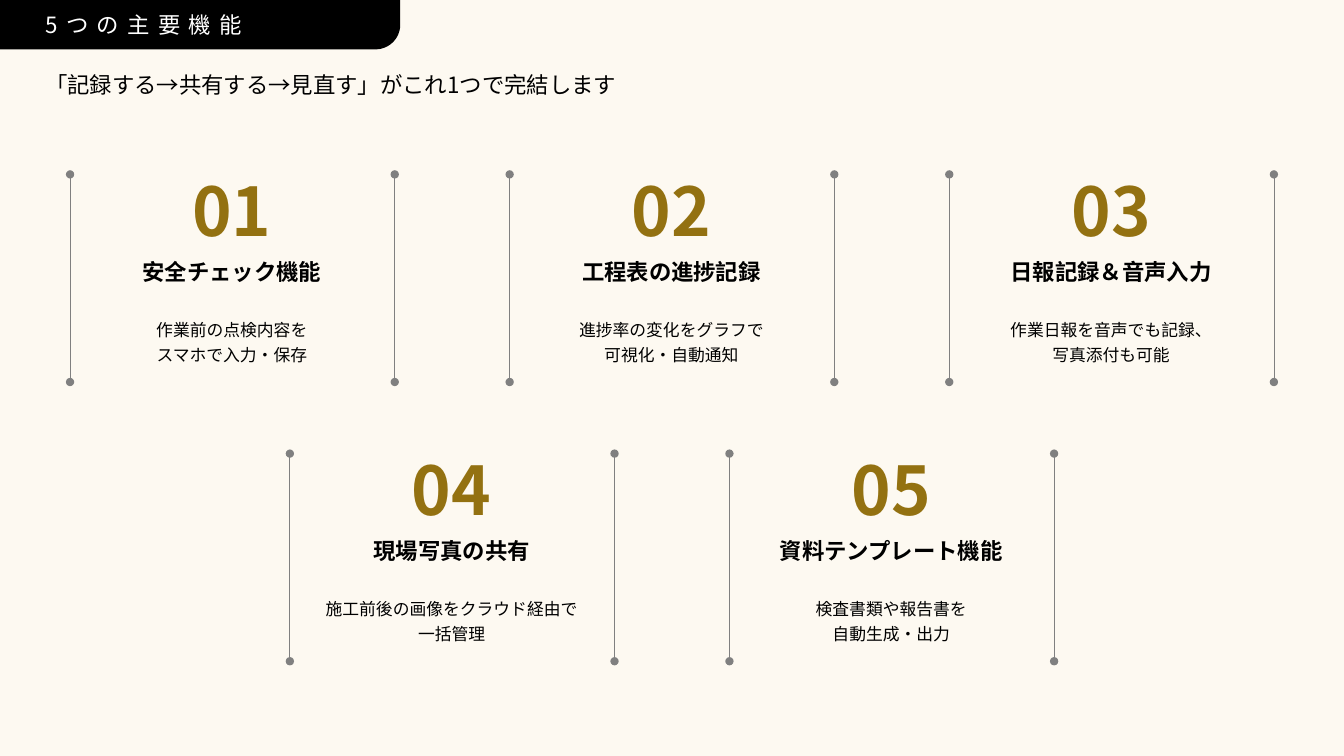
from lxml import etree
from pptx import Presentation
from pptx import util as u
from pptx.dml.color import RGBColor
from pptx.enum import shapes, text
from pptx.oxml.ns import qn

# Content
HEADING = "5つの主要機能"
LEAD = "「記録する→共有する→見直す」がこれ1つで完結します"
FEATURE_ROWS = [
    [
        ("01", "安全チェック機能", ["作業前の点検内容を", "スマホで入力・保存"]),
        ("02", "工程表の進捗記録", ["進捗率の変化をグラフで", "可視化・自動通知"]),
        ("03", "日報記録＆音声入力", ["作業日報を音声でも記録、", "写真添付も可能"]),
    ],
    [
        ("04", "現場写真の共有", ["施工前後の画像をクラウド経由で", "一括管理"]),
        ("05", "資料テンプレート機能", ["検査書類や報告書を", "自動生成・出力"]),
    ],
]

# Style and layout
COLORS = {"paper": "FDF9F1", "black": "000000", "white": "FFFFFF",
          "gold": "937111", "rule": "808080"}
FONT = "Noto Sans CJK JP"
SLIDE_W, SLIDE_H = 13.33, 7.5
CARD_W, CARD_H, CARD_PITCH = 3.22, 2.06, 4.36
FIRST_ROW_TOP, ROW_PITCH = 1.73, 2.77
TEXT_INSET, TEXT_W = 0.14, 2.93
NUMBER_FORMAT = {"size": u.Pt(48), "bold": True}
TITLE_FORMAT = {"size": u.Pt(16), "bold": True}
LEAD_FORMAT = {"size": u.Pt(16)}
BODY_FORMAT = {"size": u.Pt(12)}


def rgb(name):
    return RGBColor.from_string(COLORS[name])


def add_block(parent, kind, box, color):
    shape = parent.add_shape(kind, *map(u.Inches, box))
    shape.shadow.inherit = False
    shape.fill.solid()
    shape.fill.fore_color.rgb = rgb(color)
    shape.line.fill.background()
    return shape


def add_text(parent, box, lines, font_format, color="black",
             align=text.PP_ALIGN.CENTER, tracking=None, line_spacing=None):
    frame = parent.add_textbox(*map(u.Inches, box)).text_frame
    frame.word_wrap = True
    frame.vertical_anchor = text.MSO_ANCHOR.MIDDLE
    for index, line in enumerate(lines):
        paragraph = frame.add_paragraph() if index else frame.paragraphs[0]
        paragraph.alignment = align
        paragraph.space_before = u.Pt(6)
        paragraph.line_spacing = line_spacing
        run = paragraph.add_run()
        run.text = line
        for name, value in {"name": FONT, **font_format}.items():
            setattr(run.font, name, value)
        run.font.color.rgb = rgb(color)
        properties = run._r.get_or_add_rPr()
        etree.SubElement(properties, qn("a:ea"), typeface=FONT)
        if tracking:
            properties.set("spc", str(tracking * 100))


def add_rule(parent, x, top):
    rule = parent.add_connector(shapes.MSO_CONNECTOR.STRAIGHT,
                                *map(u.Inches, (x, top, x, top + CARD_H)))
    rule.line.color.rgb = rgb("rule")
    rule.line.width = u.Pt(0.5)
    line = rule.line._get_or_add_ln()
    for end in ("a:headEnd", "a:tailEnd"):
        etree.SubElement(line, qn(end), type="oval")
    etree.SubElement(rule._element.spPr, qn("a:effectLst"))


def add_card(slide, left, top, feature):
    number, title, body = feature
    card = slide.shapes.add_group_shape().shapes
    for x in (left, left + CARD_W):
        add_rule(card, x, top)
    text_left = left + TEXT_INSET
    add_text(card, (text_left, top + 0.78, TEXT_W, 0.37), [title], TITLE_FORMAT)
    add_text(card, (text_left, top + 1.3, TEXT_W, 0.76), body, BODY_FORMAT,
             line_spacing=0.85)
    add_text(card, (text_left, top + 0.02, TEXT_W, 0.65), [number],
             NUMBER_FORMAT, "gold")


def main():
    presentation = Presentation()
    presentation.slide_width = u.Inches(SLIDE_W)
    presentation.slide_height = u.Inches(SLIDE_H)
    slide = presentation.slides.add_slide(presentation.slide_layouts[6])
    left_align = text.PP_ALIGN.LEFT

    # Background and lead sentence
    add_block(slide.shapes, shapes.MSO_SHAPE.RECTANGLE,
              (0, 0, SLIDE_W, SLIDE_H), "paper")
    add_text(slide.shapes, (0.35, 0.62, 12.52, 0.44), [LEAD], LEAD_FORMAT,
             align=left_align)

    # Heading tab, rounded at the lower right
    tab = add_block(slide.shapes, shapes.MSO_SHAPE.ROUND_1_RECTANGLE,
                    (0, 0, 3.97, 0.49), "black")
    tab.adjustments[0] = 0.5
    tab._element.spPr.xfrm.set("flipV", "1")
    add_text(slide.shapes, (0.35, 0, 3.62, 0.49), [HEADING], LEAD_FORMAT,
             "white", left_align, tracking=6)

    # Feature cards, each row centred on the slide
    for row, features in enumerate(FEATURE_ROWS):
        row_w = CARD_W + CARD_PITCH * (len(features) - 1)
        row_left = (SLIDE_W - row_w) / 2
        for column, feature in enumerate(features):
            add_card(slide, row_left + column * CARD_PITCH,
                     FIRST_ROW_TOP + row * ROW_PITCH, feature)

    presentation.save("out.pptx")


if __name__ == "__main__":
    main()
